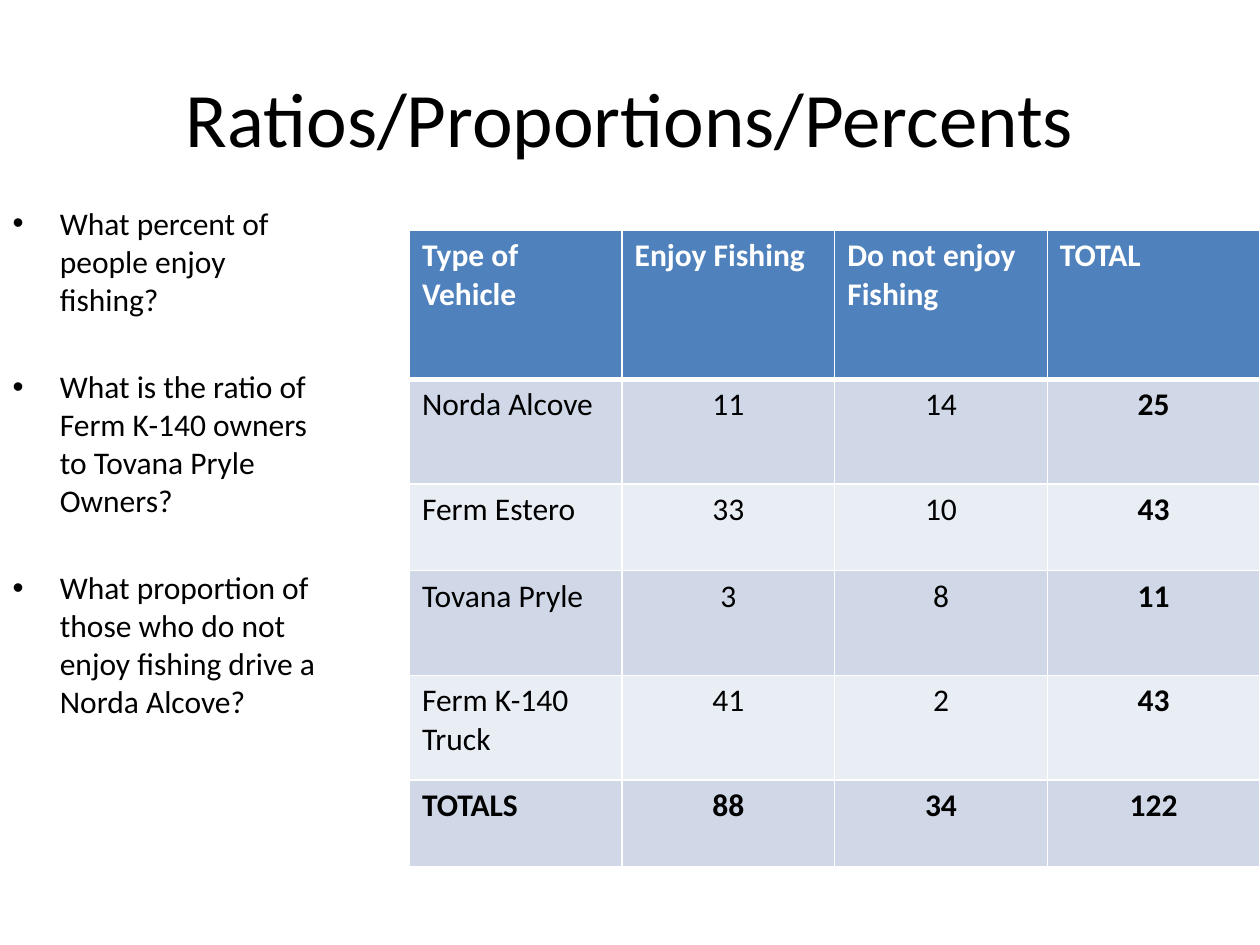
from lxml import etree
from pptx import Presentation
from pptx.dml.color import RGBColor
from pptx.enum.text import MSO_ANCHOR, MSO_AUTO_SIZE, PP_ALIGN
from pptx.oxml.ns import qn
from pptx.util import Inches, Pt

LEFT, CENTER = PP_ALIGN.LEFT, PP_ALIGN.CENTER
BLACK, WHITE, HEADER = "000000", "FFFFFF", "4F81BD"
BANDS = ["D0D8E8", "E9EDF4"]

TITLE = "Ratios/Proportions/Percents"
QUESTIONS = [
    "What percent of people enjoy fishing?",
    "What is the ratio of Ferm K-140 owners to Tovana Pryle Owners?",
    "What proportion of those who do not enjoy fishing drive a Norda Alcove?",
]
ROWS = [
    ("Type of Vehicle", "Enjoy Fishing", "Do not enjoy Fishing", "TOTAL"),
    ("Norda Alcove", "11", "14", "25"),
    ("Ferm Estero", "33", "10", "43"),
    ("Tovana Pryle", "3", "8", "11"),
    ("Ferm K-140 Truck", "41", "2", "43"),
    ("TOTALS", "88", "34", "122"),
]
ROW_HEIGHTS = [1.18, 0.83, 0.69, 0.83, 0.83, 0.69]


def rgb(color):
    return RGBColor.from_string(color)


def write(p, text, size=18, color=BLACK, bold=False, align=LEFT):
    p.alignment = align
    r = p.add_run()
    r.text = text
    r.font.name = "Calibri"
    r.font.size = Pt(size)
    r.font.bold = bold
    r.font.color.rgb = rgb(color)


def place(sp, left, top, width, height):
    sp.left, sp.top = Inches(left), Inches(top)
    sp.width, sp.height = Inches(width), Inches(height)


def fill_cell(cell, color, top=1, bottom=1):
    """Fill the cell and give it white borders; widths in points."""
    tc_pr = cell._tc.get_or_add_tcPr()
    for side, width in (("L", 1), ("R", 1), ("T", top), ("B", bottom)):
        ln = etree.SubElement(tc_pr, qn(f"a:ln{side}"), w=str(Pt(width)))
        solid = etree.SubElement(ln, qn("a:solidFill"))
        etree.SubElement(solid, qn("a:srgbClr"), val=WHITE)
    cell.fill.solid()
    cell.fill.fore_color.rgb = rgb(color)


prs = Presentation()
prs.slide_width, prs.slide_height = Inches(10), Inches(7.5)
slide = prs.slides.add_slide(prs.slide_layouts[1])
title, body = slide.placeholders

place(title, 0.5, 0.3, 9, 1.25)
title.text_frame.vertical_anchor = MSO_ANCHOR.MIDDLE
write(title.text_frame.paragraphs[0], TITLE, size=44, align=CENTER)

place(body, 0, 1.57, 2.67, 4.68)
tf = body.text_frame
tf.auto_size = MSO_AUTO_SIZE.NONE
for i, question in enumerate(QUESTIONS):
    p = tf.add_paragraph() if i else tf.paragraphs[0]
    p.space_before = Pt(28.5 if i else 0)
    write(p, question)

table = slide.shapes.add_table(
    len(ROWS), len(ROWS[0]), Inches(3.25), Inches(1.83),
    Inches(6.75), Inches(sum(ROW_HEIGHTS))).table
for i, (row, height) in enumerate(zip(ROWS, ROW_HEIGHTS)):
    table.rows[i].height = Inches(height)
    header, totals = i == 0, i == len(ROWS) - 1
    for j, text in enumerate(row):
        cell = table.cell(i, j)
        fill_cell(cell, HEADER if header else BANDS[(i - 1) % 2],
                  top=3 if i == 1 else 1, bottom=3 if header else 1)
        write(cell.text_frame.paragraphs[0], text,
              color=WHITE if header else BLACK,
              bold=header or totals or j == len(row) - 1,
              align=LEFT if header or j == 0 else CENTER)

prs.save("out.pptx")
